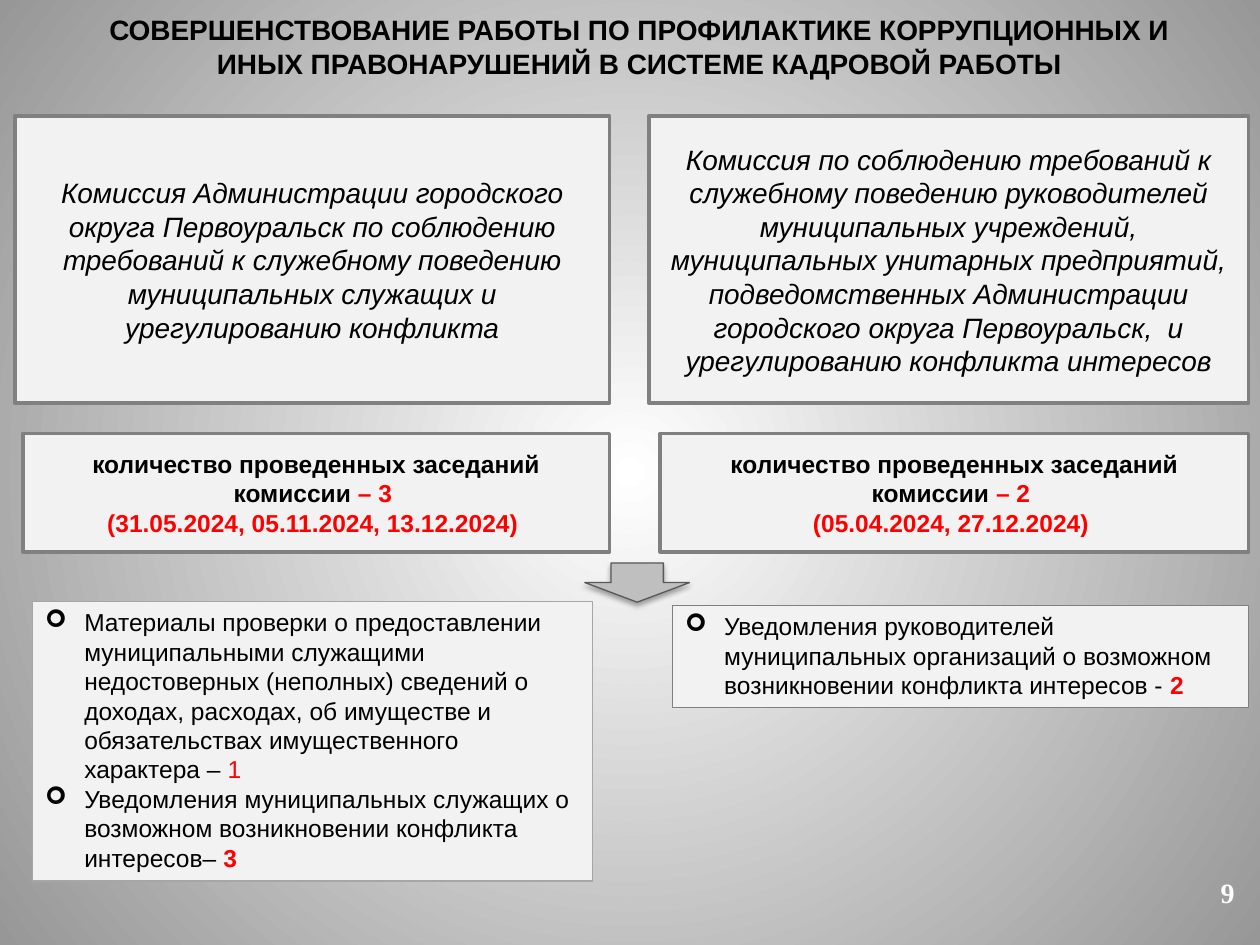
import dataclasses
import pptx
import pptx.dml.color
import pptx.enum.shapes
import pptx.enum.text
import pptx.oxml
import pptx.oxml.ns
import pptx.util
from lxml import etree

Cm = pptx.util.Cm
Pt = pptx.util.Pt
Align = pptx.enum.text.PP_ALIGN
Anchor = pptx.enum.text.MSO_ANCHOR
Preset = pptx.enum.shapes.MSO_SHAPE
qn = pptx.oxml.ns.qn


@dataclasses.dataclass(frozen=True)
class Theme:
    font: str = "Arial"
    number_font: str = "Times New Roman"
    large: int = 16
    small: int = 14
    ink: str = "000000"
    accent: str = "FF0000"
    light: str = "FFFFFF"
    edge: str = "979797"
    panel: str = "F2F2F2"
    frame: str = "808080"
    soft_frame: str = "A6A6A6"
    arrow: str = "BFBFBF"
    arrow_frame: str = "595959"


@dataclasses.dataclass(frozen=True)
class Box:
    left: float
    top: float
    width: float
    height: float

    def inner(self, left, top, width, height):
        return Box(self.left + left, self.top + top, width, height)

    def lengths(self):
        return [Cm(value) for value in (self.left, self.top, self.width, self.height)]


THEME = Theme()


def rgb(value):
    return pptx.dml.color.RGBColor.from_string(value)


def add_span(para, text, size, color=THEME.ink, bold=False, italic=False, font=THEME.font):
    span = para.add_run()
    span.text = text
    span.font.name = font
    span.font.size = Pt(size)
    span.font.bold = bold
    span.font.italic = italic
    span.font.color.rgb = rgb(color)


def next_para(frame, index, align):
    para = frame.add_paragraph() if index else frame.paragraphs[0]
    para.alignment = align
    return para


def add_bullet(para):
    properties = para._p.get_or_add_pPr()
    properties.set("marL", str(Cm(0.79)))
    properties.set("indent", str(-Cm(0.79)))
    etree.SubElement(properties, qn("a:buFont"), typeface="Wingdings")
    etree.SubElement(properties, qn("a:buChar"), char="➢")


def add_shape(page, preset, box, fill, line, weight):
    shape = page.shapes.add_shape(preset, *box.lengths())
    shape.shadow.inherit = False
    shape.fill.solid()
    shape.fill.fore_color.rgb = rgb(fill)
    shape.line.color.rgb = rgb(line)
    shape.line.width = Pt(weight)
    return shape


def add_panel(page, box, line, weight, anchor):
    frame = add_shape(page, Preset.RECTANGLE, box, THEME.panel, line, weight).text_frame
    frame.word_wrap = True
    frame.vertical_anchor = anchor
    return frame


def add_label(page, box, text, color, font):
    frame = page.shapes.add_textbox(*box.lengths()).text_frame
    frame.word_wrap = True
    para = next_para(frame, 0, Align.CENTER)
    add_span(para, text, THEME.large, color, bold=True, font=font)


def add_commission(page, box, name):
    frame = add_panel(page, box, THEME.frame, 2, Anchor.MIDDLE)
    add_span(next_para(frame, 0, Align.CENTER), name, THEME.large, italic=True)


def add_meetings(page, box, count, dates):
    frame = add_panel(page, box, THEME.frame, 2, Anchor.MIDDLE)
    para = next_para(frame, 0, Align.CENTER)
    add_span(para, "количество проведенных заседаний комиссии ", THEME.small, bold=True)
    add_span(para, f"– {count} ", THEME.small, THEME.accent, bold=True)
    para = next_para(frame, 1, Align.CENTER)
    add_span(para, f"({dates}) ", THEME.small, THEME.accent, bold=True)


def add_matters(page, box, line, matters):
    frame = add_panel(page, box, line, 0.75, Anchor.TOP)
    for index, (text, count, bold) in enumerate(matters):
        para = next_para(frame, index, Align.LEFT)
        add_bullet(para)
        add_span(para, text, THEME.small)
        add_span(para, count, THEME.small, THEME.accent, bold=bold)


def add_column(page, box, column):
    add_commission(page, box.inner(0, 0, box.width, 5.79), column["name"])
    indent = column["meetings_indent"]
    meetings_box = box.inner(indent, 6.4, box.width - indent, 2.39)
    add_meetings(page, meetings_box, column["count"], column["dates"])
    add_matters(page, box.inner(*column["matters_box"]), column["matters_line"], column["matters"])


def add_arrow(page, box):
    arrow = add_shape(page, Preset.RIGHT_ARROW, box, THEME.arrow, THEME.arrow_frame, 0.75)
    arrow.rotation = 90
    effects = arrow._element.spPr.find(qn("a:effectLst"))
    shadow = etree.SubElement(
        effects, qn("a:outerShdw"), blurRad=str(Pt(3.1)), dist=str(Pt(1.8)),
        dir="5400000", rotWithShape="0")
    color = etree.SubElement(shadow, qn("a:srgbClr"), val=THEME.ink)
    etree.SubElement(color, qn("a:alpha"), val="35000")


def paint_background(page):
    fill = page.background.fill
    fill.gradient()
    for stop, color, position in zip(fill.gradient_stops, (THEME.light, THEME.edge), (0, 1)):
        stop.color.rgb = rgb(color)
        stop.position = position
    gradient = page._element.find(".//" + qn("a:gradFill"))
    linear = gradient.find(qn("a:lin"))
    circle = etree.Element(qn("a:path"))
    circle.set("path", "circle")
    sides = dict.fromkeys("ltrb", "50000")
    etree.SubElement(circle, qn("a:fillToRect"), **sides)
    gradient.replace(linear, circle)


OFFICIALS = {
    "name": "Комиссия Администрации городского округа Первоуральск по соблюдению требований "
            "к служебному поведению муниципальных служащих и урегулированию конфликта",
    "count": 3,
    "dates": "31.05.2024, 05.11.2024, 13.12.2024",
    "meetings_indent": 0.16,
    "matters_box": (0.36, 9.78, 11.28, 5.64),
    "matters_line": THEME.soft_frame,
    "matters": [
        ("Материалы проверки о предоставлении муниципальными служащими недостоверных "
         "(неполных) сведений о доходах, расходах, об имуществе и обязательствах "
         "имущественного характера – ", "1", False),
        ("Уведомления муниципальных служащих о возможном возникновении конфликта "
         "интересов– ", "3", True),
    ],
}
MANAGERS = {
    "name": "Комиссия по соблюдению требований к служебному поведению руководителей "
            "муниципальных учреждений, муниципальных унитарных предприятий, "
            "подведомственных Администрации городского округа Первоуральск,  и "
            "урегулированию конфликта интересов",
    "count": 2,
    "dates": "05.04.2024, 27.12.2024",
    "meetings_indent": 0.23,
    "matters_box": (0.48, 9.86, 11.61, 2.06),
    "matters_line": THEME.frame,
    "matters": [
        ("Уведомления руководителей муниципальных организаций о возможном возникновении "
         "конфликта интересов - ", "2", True),
    ],
}


def main():
    deck = pptx.Presentation()
    deck.slide_width, deck.slide_height = Cm(25.4), Cm(19.05)
    page = deck.slides.add_slide(deck.slide_layouts[6])
    paint_background(page)
    add_label(page, Box(24.1, 17.53, 1.3, 0.94), "9", THEME.light, THEME.number_font)
    title = ("СОВЕРШЕНСТВОВАНИЕ РАБОТЫ ПО ПРОФИЛАКТИКЕ КОРРУПЦИОННЫХ И ИНЫХ "
             "ПРАВОНАРУШЕНИЙ В СИСТЕМЕ КАДРОВОЙ РАБОТЫ")
    add_label(page, Box(1.37, 0.13, 23.04, 1.63), title, THEME.ink, THEME.font)
    add_arrow(page, Box(12.45, 10.69, 0.79, 2.11))
    add_column(page, Box(0.3, 2.34, 11.99, 15.42), OFFICIALS)
    add_column(page, Box(13.08, 2.34, 12.09, 15.42), MANAGERS)
    deck.save("out.pptx")


if __name__ == "__main__":
    main()
